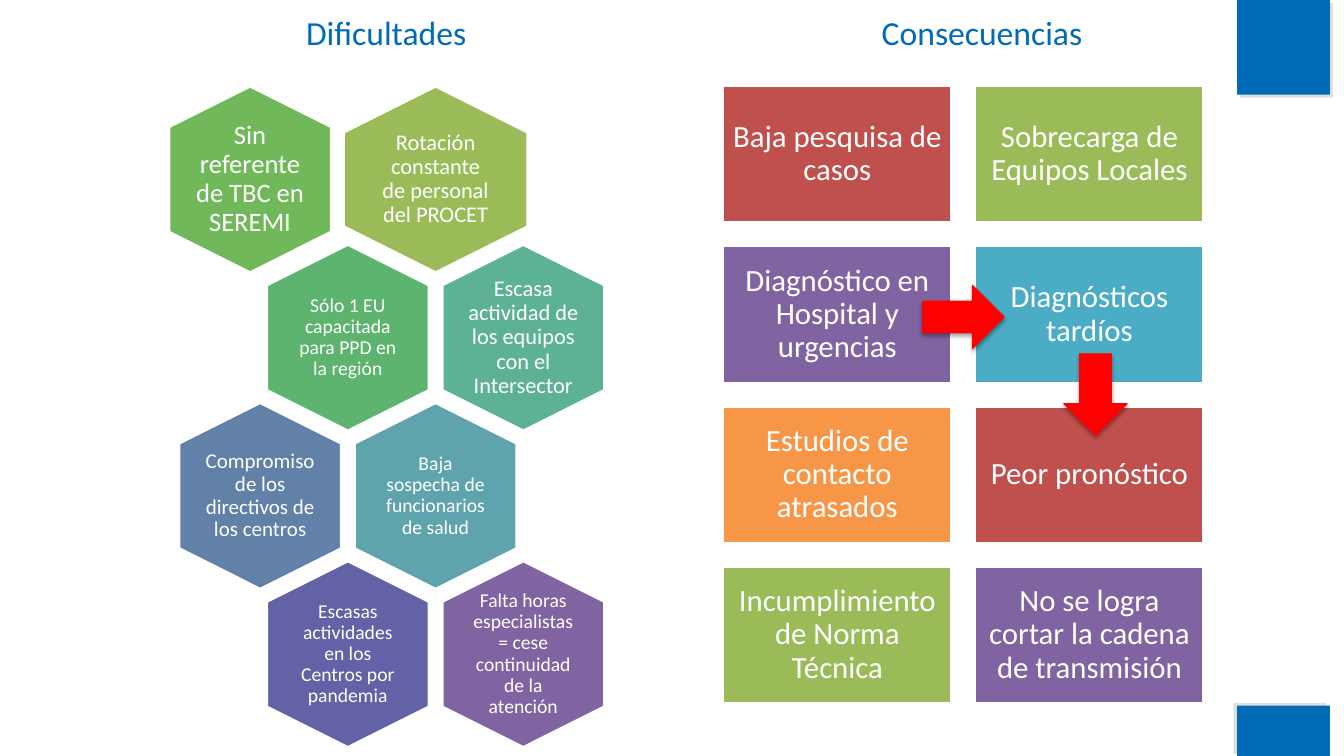
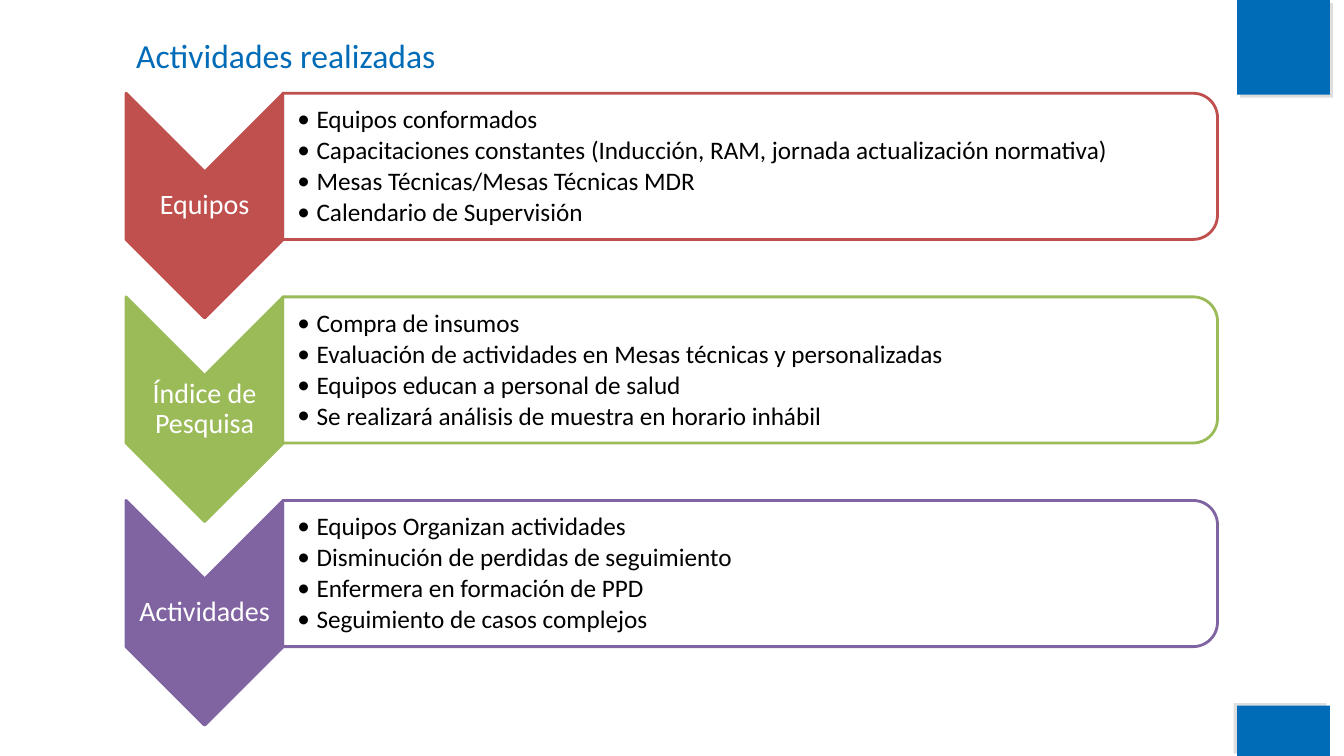
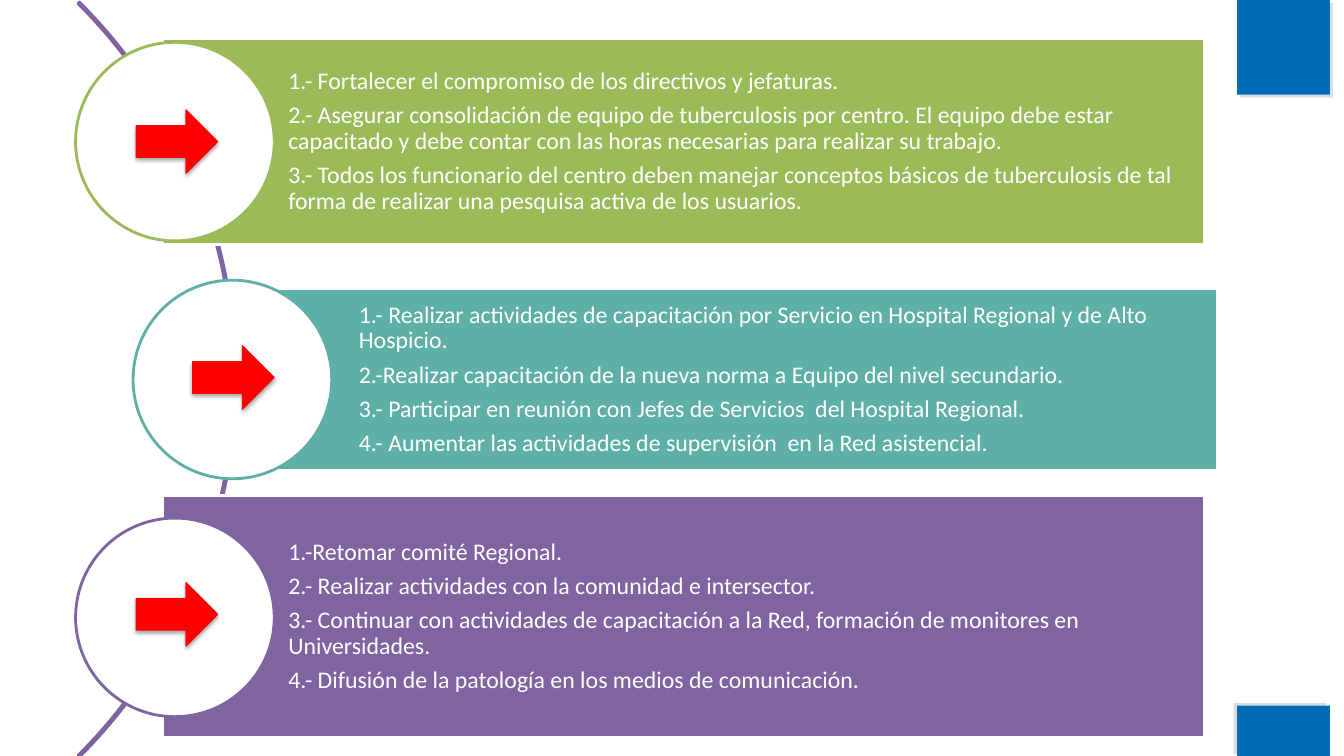
from dataclasses import dataclass
from lxml.etree import SubElement
from pptx import Presentation
from pptx.dml.color import RGBColor
from pptx.enum.shapes import MSO_SHAPE as Preset
from pptx.enum.text import MSO_ANCHOR as Anchor, MSO_AUTO_SIZE as AutoSize, PP_ALIGN as Align
from pptx.oxml.ns import qn
from pptx.util import Inches, Pt


@dataclass(frozen=True)
class Theme:
    font: str = "Calibri"
    blue: str = "006CB7"
    arrow: str = "FF0000"
    white: str = "FFFFFF"
    black: str = "000000"
    gray: str = "808080"
    red: str = "C0504D"
    green: str = "9BBB59"
    purple: str = "8064A2"
    aqua: str = "4BACC6"
    orange: str = "F79646"
    teal: str = "5EAFA6"
    title_size: int = 24
    card_size: int = 22
    label_size: int = 20
    bullet_size: int = 18
    step_size: int = 17
    outline: int = 2


THEME = Theme()
SLIDE_WIDTH, SLIDE_HEIGHT = 13.33, 7.5
TITLE_ONLY, BLANK = 5, 6

# Plain corner blocks: box, shadow direction
CORNER_BLOCKS = [
    ((12.27, 0, 0.92, 0.94), 45),
    ((12.27, 7, 0.92, 0.5), 215),
]

# Hexagons: row, column, nudge, breadth, colour, type size, inset, text
DIFFICULTIES = [
    (0, 0, -0.1, 1.61, "70B85A", 19, 0, "Sin referente de TBC en SEREMI"),
    (0, 2, 0, 1.83, THEME.green, 16, 0.07, "Rotación constante de personal del PROCET"),
    (1, 1, 0, 1.61, "5CB46F", 14, 0.06, "Sólo 1 EU capacitada para PPD en la región"),
    (1, 3, 0, 1.61, "5DB195", 16, 0, "Escasa actividad de los equipos con el Intersector"),
    (2, 0, 0, 1.61, "6181A9", 15, 0, "Compromiso de los directivos de los centros"),
    (2, 2, 0, 1.61, "5FA4AD", 14, 0.06, "Baja sospecha de funcionarios de salud"),
    (3, 1, 0, 1.61, "6362A6", 14, 0.06, "Escasas actividades en los Centros por pandemia"),
    (3, 3, 0, 1.61, THEME.purple, 14, 0,
     "Falta horas especialistas = cese continuidad de la atención"),
]

CONSEQUENCES = [
    ("Baja pesquisa de casos", THEME.red),
    ("Sobrecarga de Equipos Locales", THEME.green),
    ("Diagnóstico en Hospital y urgencias", THEME.purple),
    ("Diagnósticos tardíos", THEME.aqua),
    ("Estudios de contacto atrasados", THEME.orange),
    ("Peor pronóstico", THEME.red),
    ("Incumplimiento de Norma Técnica", THEME.green),
    ("No se logra cortar la cadena de transmisión", THEME.purple),
]

ACTIVITIES = [
    ("Equipos", THEME.red, [
        "Equipos conformados",
        "Capacitaciones constantes (Inducción, RAM, jornada actualización normativa)",
        "Mesas Técnicas/Mesas Técnicas MDR",
        "Calendario de Supervisión",
    ]),
    ("Índice de Pesquisa", THEME.green, [
        "Compra de insumos",
        "Evaluación de actividades en Mesas técnicas y personalizadas",
        "Equipos educan a personal de salud",
        "Se realizará análisis de muestra en horario inhábil",
    ]),
    ("Actividades", THEME.purple, [
        "Equipos Organizan actividades",
        "Disminución de perdidas de seguimiento",
        "Enfermera en formación de PPD",
        "Seguimiento de casos complejos",
    ]),
]

# Steps: panel box, circle left, arrow left and top, colour, paragraphs
STEPS = [
    ((1.61, 0.38, 10.34, 2.05), 0.75, (1.35, 1.09), THEME.green, [
        "1.- Fortalecer el compromiso de los directivos y jefaturas.",
        "2.- Asegurar consolidación de equipo de tuberculosis por centro. El equipo debe estar "
        "capacitado y debe contar con las horas necesarias para realizar su trabajo.",
        "3.- Todos los funcionario del centro deben manejar conceptos básicos de tuberculosis "
        "de tal forma de realizar una pesquisa activa de los usuarios.",
    ]),
    ((2.31, 2.86, 9.77, 1.81), 1.32, (1.91, 3.43), THEME.teal, [
        "1.- Realizar actividades de capacitación por Servicio en Hospital Regional y de Alto "
        "Hospicio.",
        "2.-Realizar capacitación de la nueva norma a Equipo del nivel secundario.",
        "3.- Participar en reunión con Jefes de Servicios  del Hospital Regional.",
        "4.- Aumentar las actividades de supervisión  en la Red asistencial.",
    ]),
    ((1.61, 4.92, 10.34, 2.4), 0.75, (1.35, 5.78), THEME.purple, [
        "1.-Retomar comité Regional.",
        "2.- Realizar actividades con la comunidad e intersector.",
        "3.- Continuar con actividades de capacitación a la Red, formación de monitores en "
        "Universidades.",
        "4.- Difusión de la patología en los medios de comunicación.",
    ]),
]


def assign(target, **values):
    for name, value in values.items():
        setattr(target, name, value)


def inches(box):
    return [Inches(length) for length in box]


def around(center_x, center_y, width, height):
    """Box of the given size about a centre."""
    return center_x - width / 2, center_y - height / 2, width, height


def add_shadow(shape, color, alpha, blur, distance, direction):
    effects = shape._element.spPr.find(qn("a:effectLst"))
    shadow = SubElement(effects, qn("a:outerShdw"), blurRad=str(Pt(blur)),
                        dist=str(Pt(distance)), dir=str(direction * 60000),
                        algn="ctr", rotWithShape="0")
    tint = SubElement(shadow, qn("a:srgbClr"), val=color)
    SubElement(tint, qn("a:alpha"), val=str(alpha * 1000))


def add_preset(slide, preset, box, fill=None, line=None, width=THEME.outline, rotation=0):
    shape = slide.shapes.add_shape(preset, *inches(box))
    shape.shadow.inherit = False
    shape.rotation = rotation
    for paint, color in ((shape.fill, fill), (shape.line.fill, line)):
        if color:
            paint.solid()
            paint.fore_color.rgb = RGBColor.from_string(color)
        else:
            paint.background()
    if line:
        shape.line.width = Pt(width)
    return shape


def write(shape, paragraphs, size, color=THEME.white, align=Align.CENTER, anchor=Anchor.MIDDLE,
          insets=(0.1, 0.05, 0.1, 0.05), line_spacing=0.9, space_share=0.35, bullet=None):
    """Fill a shape with paragraphs; insets run left, top, right, bottom."""
    left, top, right, bottom = inches(insets)
    frame = shape.text_frame
    assign(frame, word_wrap=True, auto_size=AutoSize.NONE, vertical_anchor=anchor,
           margin_left=left, margin_top=top, margin_right=right, margin_bottom=bottom)
    for index, text in enumerate(paragraphs):
        paragraph = frame.add_paragraph() if index else frame.paragraphs[0]
        if bullet:
            properties = paragraph._p.get_or_add_pPr()
            properties.set("marL", str(Inches(0.19)))
            properties.set("indent", str(-Inches(0.19)))
            SubElement(properties, qn("a:buFont"), typeface=THEME.font)
            SubElement(properties, qn("a:buChar"), char=bullet)
            paragraph.level = 1
        assign(paragraph, alignment=align, line_spacing=line_spacing,
               space_after=Pt(size * space_share))
        run = paragraph.add_run()
        run.text = text
        assign(run.font, name=THEME.font, size=Pt(size))
        run.font.color.rgb = RGBColor.from_string(color)


def add_text(slide, box, paragraphs, size, **format_values):
    write(slide.shapes.add_textbox(*inches(box)), paragraphs, size, **format_values)


TITLE_FORMAT = dict(size=THEME.title_size, color=THEME.blue, anchor=Anchor.TOP,
                    line_spacing=1.0, space_share=0)


def set_title(slide, text, box, align):
    title = slide.shapes.title
    left, top, width, height = inches(box)
    assign(title, left=left, top=top, width=width, height=height)
    write(title, [text], align=align, **TITLE_FORMAT)


def add_arrow(slide, left, top, rotation=0):
    arrow = add_preset(slide, Preset.RIGHT_ARROW, (left, top, 0.81, 0.63),
                       THEME.arrow, THEME.arrow, 0.75, rotation)
    add_shadow(arrow, THEME.black, 35, 3.1, 1.8, 90)


def add_corner_blocks_to_master(presentation, slide):
    """Draw the corner blocks on a slide, then move them to the master."""
    for box, direction in CORNER_BLOCKS:
        block = add_preset(slide, Preset.RECTANGLE, box, THEME.blue)
        add_shadow(block, THEME.gray, 25, 0, 3, direction)
        presentation.slide_master.shapes._spTree.append(block._element)


def build_difficulties(slide):
    set_title(slide, "Dificultades", (1.99, 0.07, 3.68, 1.06), Align.CENTER)
    for row, column, nudge, breadth, color, size, inset, text in DIFFICULTIES:
        center = 2.58 + 0.87 * column + nudge, 1.78 + 1.57 * row
        add_preset(slide, Preset.HEXAGON, around(*center, 1.85, breadth),
                   color, THEME.white, rotation=90)
        text_size = (1.22, 1.24) if breadth > 1.61 else (1.11, 1.28)
        add_text(slide, around(*center, *text_size), [text], size, insets=[inset] * 4)

    add_text(slide, (7.9, 0.07, 3.68, 1.06), ["Consecuencias"], **TITLE_FORMAT)
    for index, (text, color) in enumerate(CONSEQUENCES):
        row, column = divmod(index, 2)
        card = add_preset(slide, Preset.RECTANGLE,
                          (7.17 + 2.5 * column, 0.85 + 1.59 * row, 2.27, 1.36),
                          color, THEME.white)
        write(card, [text], THEME.card_size, insets=[0.09] * 4)
    add_arrow(slide, 9.15, 2.83)
    add_arrow(slide, 10.46, 3.6, rotation=90)


def build_activities(slide):
    set_title(slide, "Actividades realizadas", (1.25, 0.3, 10.83, 1.62), Align.LEFT)
    for row, (label, color, items) in enumerate(ACTIVITIES):
        offset = 2.02 * row
        center = 2.03, 2.04 + offset
        add_preset(slide, Preset.CHEVRON, around(*center, 2.23, 1.56), color, color, rotation=90)
        add_text(slide, around(*center, 1.56, 0.67), [label], THEME.label_size,
                 insets=[0.01] * 4)
        bar = add_preset(slide, Preset.ROUND_2_SAME_RECTANGLE,
                         around(7.44, 1.65 + offset, 1.45, 9.27),
                         THEME.white, color, rotation=90)
        tint = bar._element.spPr.find(qn("a:solidFill"))[0]
        SubElement(tint, qn("a:alpha"), val="90000")
        add_text(slide, (2.81, 1 + offset, 9.2, 1.31), items, THEME.bullet_size,
                 color=THEME.black, align=Align.LEFT, insets=(0.14, 0.01, 0.01, 0.01),
                 space_share=0.15, bullet="•")


def build_steps(slide):
    arc = add_preset(slide, Preset.BLOCK_ARC, (-8.25, -1.53, 10.59, 10.59), line=THEME.purple)
    for index, value in enumerate((189, 27, 0.002)):
        arc.adjustments[index] = value
    for row, (box, circle_left, arrow_corner, color, paragraphs) in enumerate(STEPS):
        panel = add_preset(slide, Preset.RECTANGLE, box, color, THEME.white)
        write(panel, paragraphs, THEME.step_size, align=Align.LEFT,
              insets=(1.25, 0.05, 0.05, 0.05))
        add_preset(slide, Preset.OVAL, (circle_left, 0.42 + 2.36 * row, 1.97, 1.97),
                   THEME.white, color)
        add_arrow(slide, *arrow_corner)


def main():
    presentation = Presentation()
    assign(presentation, slide_width=Inches(SLIDE_WIDTH), slide_height=Inches(SLIDE_HEIGHT))
    pages = [(TITLE_ONLY, build_difficulties), (TITLE_ONLY, build_activities),
             (BLANK, build_steps)]
    for index, (layout, build) in enumerate(pages):
        slide = presentation.slides.add_slide(presentation.slide_layouts[layout])
        if index == 0:
            add_corner_blocks_to_master(presentation, slide)
        build(slide)
    presentation.save("out.pptx")


if __name__ == "__main__":
    main()
